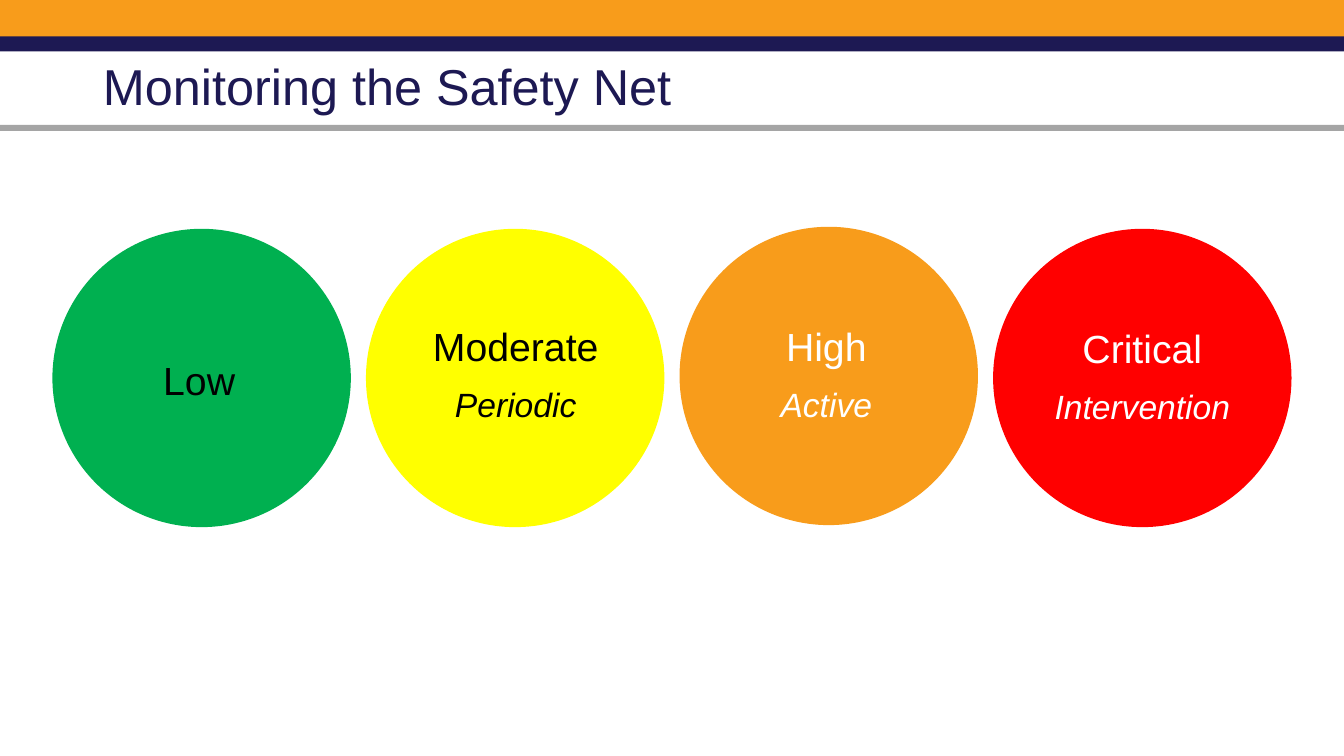
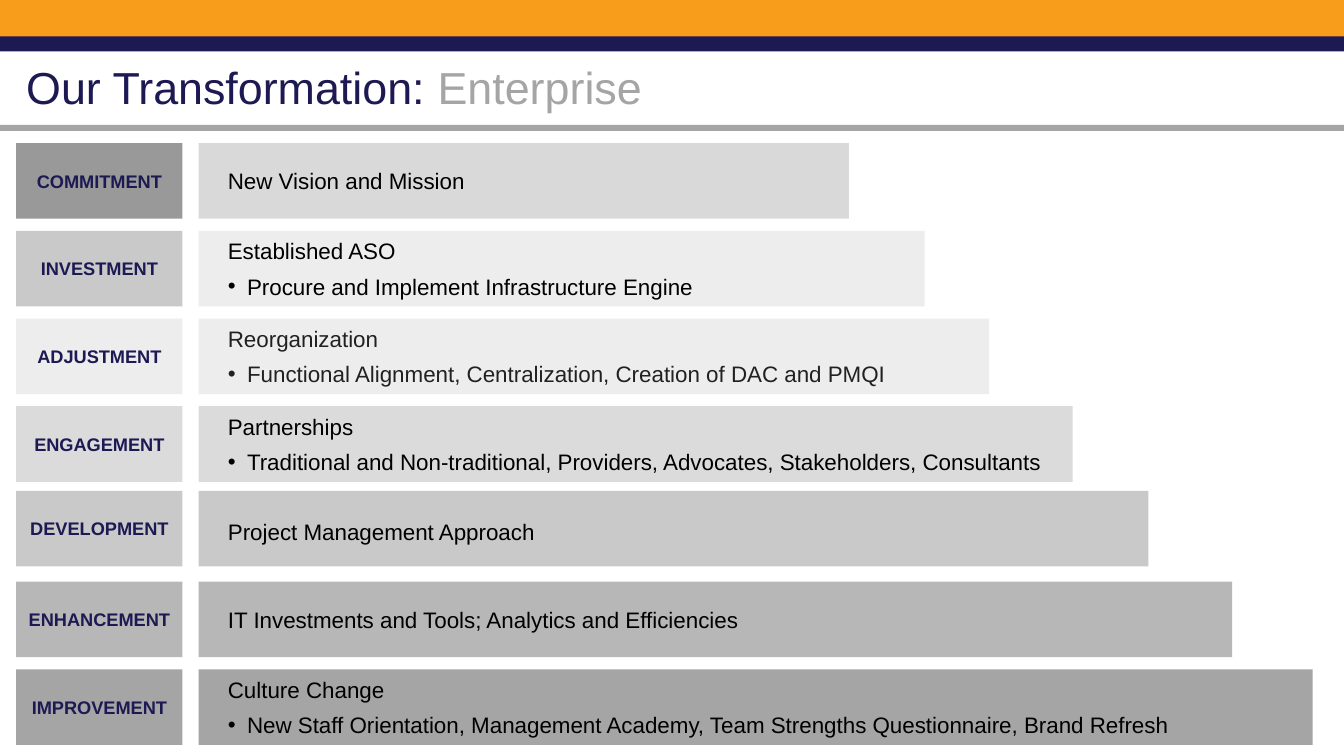
from dataclasses import dataclass

from lxml.etree import SubElement
from pptx import Presentation
from pptx.dml.color import RGBColor
from pptx.enum.shapes import MSO_SHAPE
from pptx.enum.text import MSO_ANCHOR, MSO_AUTO_SIZE, PP_ALIGN
from pptx.oxml.ns import qn
from pptx.util import Inches, Pt

COLORS = {
    "navy": "1D1953",
    "orange": "F89C1B",
    "gray": "A5A5A5",
    "dark_gray": "999999",
    "silver": "C9C9C9",
    "light_gray": "D9D9D9",
    "pale_gray": "EDEDED",
    "green": "00B050",
    "yellow": "FFFF00",
    "red": "FF0000",
    "black": "000000",
    "soft_black": "212121",
    "white": "FFFFFF",
}
FONT = "Arial"
SLIDE_WIDTH, SLIDE_HEIGHT = 13.33, 7.5

CIRCLE_LEFT, CIRCLE_TOP = 0.52, 2.27
CIRCLE_SIZE, CIRCLE_PITCH = 2.96, 3.11
CAPTION_HEIGHT = 1.88

ROW_TOP, ROW_PITCH, ROW_HEIGHT = 1.42, 0.87, 0.75
LABEL_LEFT, LABEL_WIDTH = 0.16, 1.65
BAR_LEFT, BAR_INSET = 1.97, 0.29
BULLET_INDENT = 0.19


@dataclass(frozen=True)
class Box:
    left: float
    top: float
    width: float
    height: float

    def lengths(self) -> tuple:
        return tuple(Inches(n) for n in (self.left, self.top, self.width, self.height))


@dataclass(frozen=True)
class Band:
    color: str
    top: float
    height: float


@dataclass(frozen=True)
class Level:
    name: str
    action: str
    fill: str
    text_color: str
    caption_top: float
    caption_width: float
    caption_shift: float = 0
    lift: float = 0


@dataclass(frozen=True)
class Stage:
    label: str
    heading: str
    bullet: str
    bar_width: float
    label_fill: str = "gray"
    bar_fill: str = "gray"
    opacity: int = 100
    lift: float = 0
    text_color: str = "black"


BANDS = [
    Band("orange", 0, 0.4),
    Band("navy", 0.36, 0.15),
    Band("gray", 1.24, 0.06),
]

LEVELS = [
    Level("Low", "", "green", "black", 3.49, 2.91),
    Level("Moderate", "Periodic", "yellow", "black", 3.15, 2.83, caption_shift=0.07),
    Level("High", "Active", "orange", "white", 3.15, 2.91, lift=0.02),
    Level("Critical", "Intervention", "red", "white", 3.17, 2.96),
]

STAGES = [
    Stage("COMMITMENT", "New Vision and Mission", "", 6.45, "dark_gray", "light_gray"),
    Stage("INVESTMENT", "Established ASO",
          "Procure and Implement Infrastructure Engine", 7.2, "silver", "pale_gray"),
    Stage("ADJUSTMENT", "Reorganization",
          "Functional Alignment, Centralization, Creation of DAC and PMQI",
          7.84, opacity=20, text_color="soft_black"),
    Stage("ENGAGEMENT", "Partnerships",
          "Traditional and Non-traditional, Providers, Advocates, Stakeholders, Consultants",
          8.67, opacity=40),
    Stage("DEVELOPMENT", "Project Management Approach", "", 9.42, opacity=60, lift=0.03),
    Stage("ENHANCEMENT", "IT Investments and Tools; Analytics and Efficiencies", "",
          10.25, opacity=80),
    Stage("IMPROVEMENT", "Culture Change",
          "New Staff Orientation, Management Academy, Team Strengths Questionnaire, Brand Refresh",
          11.05),
]


def rgb(name: str) -> RGBColor:
    return RGBColor.from_string(COLORS[name])


def add_filled(slide, kind, box: Box, color: str, opacity: int = 100):
    shape = slide.shapes.add_shape(kind, *box.lengths())
    shape.shadow.inherit = False
    shape.line.fill.background()
    shape.fill.solid()
    shape.fill.fore_color.rgb = rgb(color)
    if opacity < 100:
        color_element = shape.element.spPr.find(qn("a:solidFill"))[0]
        SubElement(color_element, qn("a:alpha")).set("val", str(opacity * 1000))
    return shape


def add_run(paragraph, text: str, size: float, color: str,
            bold: bool = False, italic: bool = False) -> None:
    run = paragraph.add_run()
    run.text = text
    run.font.name = FONT
    run.font.size = Pt(size)
    run.font.color.rgb = rgb(color)
    run.font.bold = bold
    run.font.italic = italic


def start_paragraph(frame, first: bool, alignment, space: float):
    paragraph = frame.paragraphs[0] if first else frame.add_paragraph()
    paragraph.alignment = alignment
    paragraph.space_before = Pt(space)
    return paragraph


def set_bullet(paragraph) -> None:
    properties = paragraph._p.get_or_add_pPr()
    properties.set("marL", str(Inches(BULLET_INDENT)))
    properties.set("indent", str(-Inches(BULLET_INDENT)))
    SubElement(properties, qn("a:buFont")).set("typeface", FONT)
    SubElement(properties, qn("a:buChar")).set("char", "•")


def dress_layout(layout, slide) -> None:
    for placeholder in list(layout.placeholders):
        if placeholder.placeholder_format.idx != 0:
            placeholder.element.getparent().remove(placeholder.element)
    bands = [
        add_filled(slide, MSO_SHAPE.RECTANGLE,
                   Box(0, band.top, SLIDE_WIDTH, band.height), band.color)
        for band in BANDS
    ]
    for position, band in enumerate(bands, start=2):
        layout.shapes.element.insert(position, band.element)


def set_title(slide, box: Box, size: float, parts: list[tuple[str, str]]) -> None:
    title = slide.shapes.title
    title.left, title.top, title.width, title.height = box.lengths()
    frame = title.text_frame
    frame.auto_size = MSO_AUTO_SIZE.NONE
    frame.vertical_anchor = MSO_ANCHOR.MIDDLE
    paragraph = start_paragraph(frame, True, PP_ALIGN.LEFT, 0)
    paragraph.line_spacing = 0.9
    for text, color in parts:
        add_run(paragraph, text, size, color)


def draw_level(slide, column: int, level: Level) -> None:
    left = CIRCLE_LEFT + column * CIRCLE_PITCH
    add_filled(slide, MSO_SHAPE.OVAL,
               Box(left, CIRCLE_TOP - level.lift, CIRCLE_SIZE, CIRCLE_SIZE), level.fill)
    box = Box(left + level.caption_shift, level.caption_top,
              level.caption_width, CAPTION_HEIGHT)
    frame = slide.shapes.add_textbox(*box.lengths()).text_frame
    frame.word_wrap = True
    add_run(start_paragraph(frame, True, PP_ALIGN.CENTER, 10),
            level.name, 28, level.text_color)
    if level.action:
        add_run(start_paragraph(frame, False, PP_ALIGN.CENTER, 10),
                level.action, 24, level.text_color, italic=True)


def draw_stage(slide, row: int, stage: Stage) -> None:
    top = ROW_TOP + row * ROW_PITCH - stage.lift
    bar = add_filled(slide, MSO_SHAPE.RECTANGLE,
                     Box(BAR_LEFT, top, stage.bar_width, ROW_HEIGHT),
                     stage.bar_fill, stage.opacity)
    frame = bar.text_frame
    frame.word_wrap = True
    frame.vertical_anchor = MSO_ANCHOR.MIDDLE
    frame.margin_left = Inches(BAR_INSET)
    frame.margin_top = Inches(0.05 + 2 * stage.lift)
    add_run(start_paragraph(frame, True, PP_ALIGN.LEFT, 6),
            stage.heading, 16, stage.text_color)
    if stage.bullet:
        paragraph = start_paragraph(frame, False, PP_ALIGN.LEFT, 6)
        set_bullet(paragraph)
        add_run(paragraph, stage.bullet, 16, stage.text_color)

    label = add_filled(slide, MSO_SHAPE.RECTANGLE,
                       Box(LABEL_LEFT, top, LABEL_WIDTH, ROW_HEIGHT),
                       stage.label_fill, stage.opacity)
    label.text_frame.vertical_anchor = MSO_ANCHOR.MIDDLE
    add_run(start_paragraph(label.text_frame, True, PP_ALIGN.CENTER, 6),
            stage.label, 13, "navy", bold=True)


def main() -> None:
    presentation = Presentation()
    presentation.slide_width = Inches(SLIDE_WIDTH)
    presentation.slide_height = Inches(SLIDE_HEIGHT)
    layout = presentation.slide_layouts.get_by_name("Title Only")

    safety_net = presentation.slides.add_slide(layout)
    dress_layout(layout, safety_net)
    set_title(safety_net, Box(0.92, 0.16, 11.5, 1.45), 36,
              [("Monitoring the Safety Net", "navy")])
    for column, level in enumerate(LEVELS):
        draw_level(safety_net, column, level)

    transformation = presentation.slides.add_slide(layout)
    set_title(transformation, Box(0.16, 0.37, 11.5, 1.04), 32,
              [("Our Transformation: ", "navy"), ("Enterprise", "gray")])
    for row, stage in enumerate(STAGES):
        draw_stage(transformation, row, stage)

    presentation.save("out.pptx")


if __name__ == "__main__":
    main()
